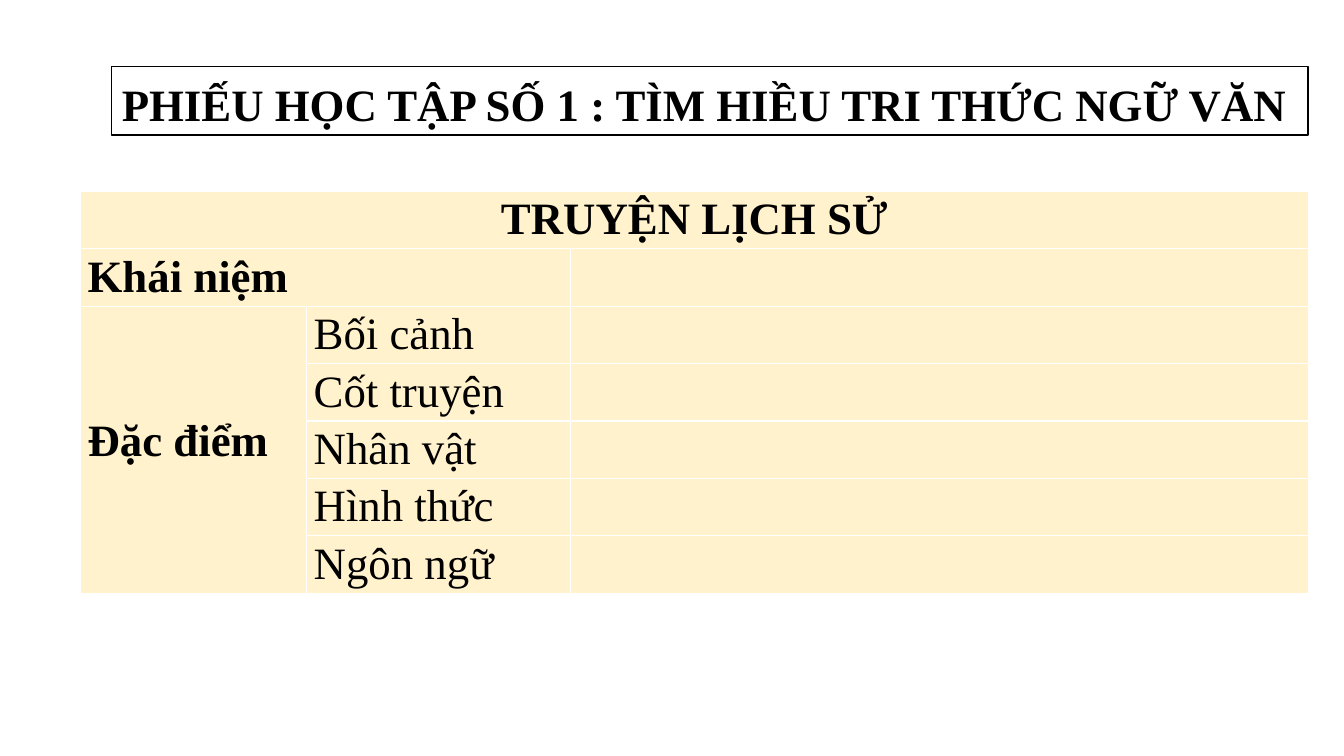
from pptx import Presentation
from pptx.dml.color import RGBColor
from pptx.enum.text import MSO_ANCHOR as Anchor, MSO_AUTO_SIZE as AutoSize, PP_ALIGN as Align
from pptx.util import Pt

COLORS = {"text": "000000", "paper": "FFFFFF", "cream": "FFF2CC"}
FEATURES = ["Bối cảnh", "Cốt truyện", "Nhân vật", "Hình thức", "Ngôn ngữ"]
COLUMN_WIDTHS = [161.5, 188.5, 527]
ROW_HEIGHT = 41


def color(name):
    return RGBColor.from_string(COLORS[name])


def set_format(target, values):
    for name, value in values.items():
        setattr(target, name, value)


class Worksheet:
    """Holds the text style and the current slide of a study worksheet."""

    def __init__(self, presentation):
        self.slide = presentation.slides.add_slide(presentation.slide_layouts[5])
        self.font = {"name": "Times New Roman", "size": Pt(32)}

    def fill_text(self, text_frame, text, bold=True, align=Align.LEFT):
        text_frame.text = text
        paragraph = text_frame.paragraphs[0]
        set_format(paragraph, {"alignment": align, "line_spacing": 1.07})
        set_format(paragraph.font, {**self.font, "bold": bold})
        paragraph.font.color.rgb = color("text")

    def title(self, text, left, top, width, height):
        shape = self.slide.shapes.title
        set_format(shape, {"left": Pt(left), "top": Pt(top),
                           "width": Pt(width), "height": Pt(height)})
        shape.fill.solid()
        shape.fill.fore_color.rgb = color("paper")
        shape.line.color.rgb = color("text")
        shape.line.width = Pt(1)
        set_format(shape.text_frame, {"auto_size": AutoSize.NONE, "word_wrap": True,
                                      "vertical_anchor": Anchor.BOTTOM})
        self.fill_text(shape.text_frame, text)

    def table(self, left, top, widths, row_count):
        shape = self.slide.shapes.add_table(row_count, len(widths), Pt(left), Pt(top),
                                            Pt(sum(widths)), Pt(row_count * ROW_HEIGHT))
        table = shape.table
        table.horz_banding = False
        for column, width in zip(table.columns, widths):
            column.width = Pt(width)
        for cell in table.iter_cells():
            cell.fill.solid()
            cell.fill.fore_color.rgb = color("cream")
            set_format(cell, {"margin_left": Pt(5), "margin_right": Pt(5),
                              "margin_top": 0, "margin_bottom": 0})
        return table

    def label(self, cell, text, last=None, **style):
        if last:
            cell.merge(last)
        self.fill_text(cell.text_frame, text, **style)


def main():
    presentation = Presentation()
    set_format(presentation, {"slide_width": Pt(960), "slide_height": Pt(540)})
    worksheet = Worksheet(presentation)
    worksheet.title("PHIẾU HỌC TẬP SỐ 1 : TÌM HIỀU TRI THỨC NGỮ VĂN", 79.8, 47.5, 854.6, 49)

    table = worksheet.table(57.6, 136.8, COLUMN_WIDTHS, len(FEATURES) + 2)
    cell = table.cell
    worksheet.label(cell(0, 0), "TRUYỆN LỊCH SỬ", cell(0, 2), align=Align.CENTER)
    worksheet.label(cell(1, 0), "Khái niệm", cell(1, 1))
    worksheet.label(cell(2, 0), "Đặc điểm", cell(len(FEATURES) + 1, 0))
    cell(2, 0).margin_top = Pt(76)
    for row, feature in enumerate(FEATURES, start=2):
        worksheet.label(cell(row, 1), feature, bold=False)
    presentation.save("out.pptx")


if __name__ == "__main__":
    main()
